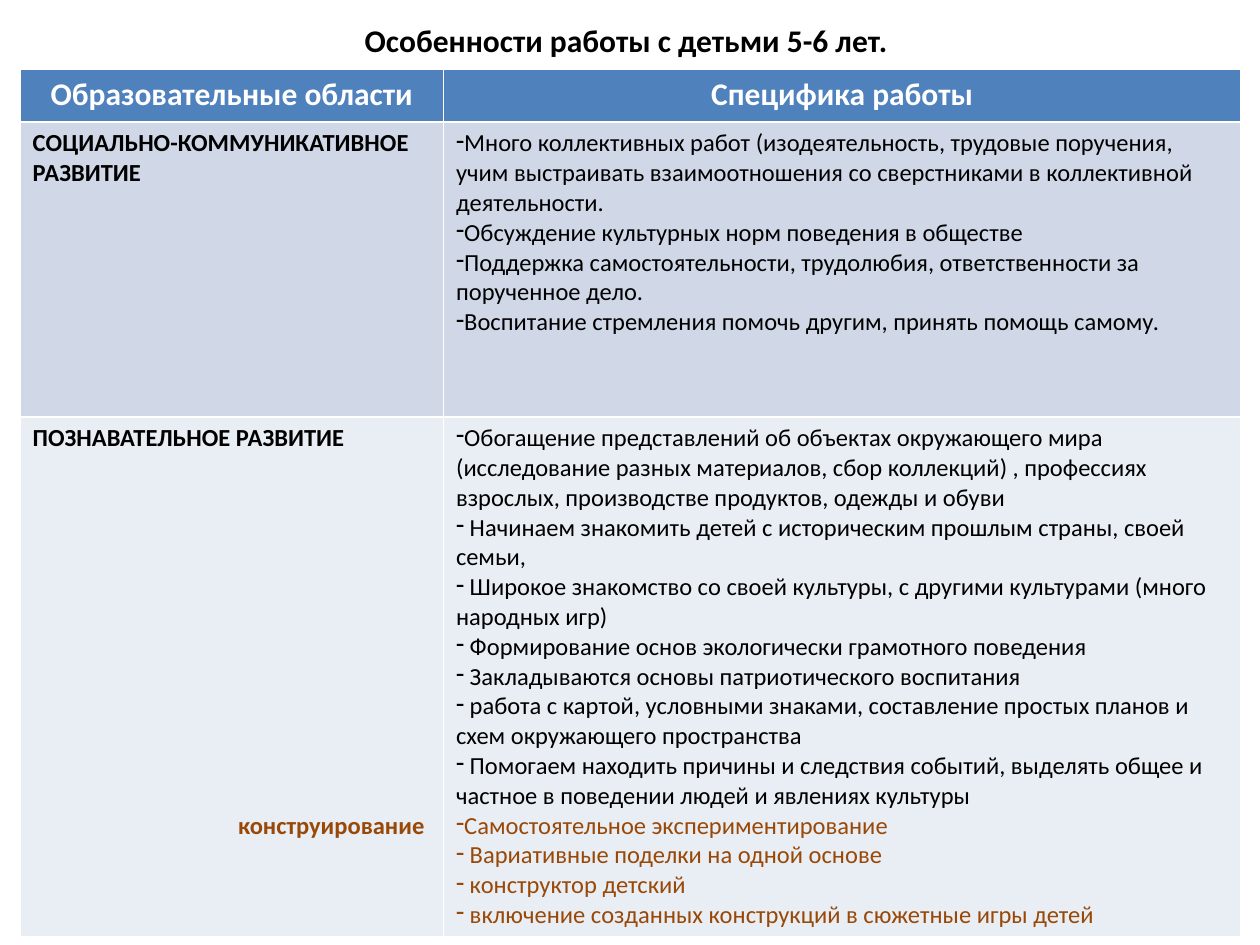
import pptx
import pptx.util
import pptx.dml.color
import pptx.enum.text
import lxml.etree

Inches = pptx.util.Inches
Pt = pptx.util.Pt
ALIGN = pptx.enum.text.PP_ALIGN
DARK, WHITE, BROWN = "000000", "FFFFFF", "984807"
HEADS = ["Образовательные области", "Специфика работы"]
SOCIAL = [
    "Много коллективных работ (изодеятельность, трудовые поручения, учим выстраивать "
    "взаимоотношения со сверстниками в коллективной деятельности.",
    "Обсуждение культурных норм поведения в обществе",
    "Поддержка самостоятельности, трудолюбия, ответственности за порученное дело.",
    "Воспитание стремления помочь другим, принять помощь самому.",
]
STUDY = [
    "Обогащение представлений об объектах окружающего мира (исследование разных "
    "материалов, сбор коллекций) , профессиях взрослых, производстве продуктов, одежды и обуви",
    " Начинаем знакомить детей с историческим прошлым страны, своей семьи,",
    " Широкое знакомство со своей культуры, с другими культурами (много народных игр)",
    " Формирование основ экологически грамотного поведения",
    " Закладываются основы патриотического воспитания",
    " работа с картой, условными знаками, составление простых планов и схем "
    "окружающего пространства",
    " Помогаем находить причины и следствия событий, выделять общее и частное "
    "в поведении людей и явлениях культуры",
]
BUILD = [
    "Самостоятельное экспериментирование",
    " Вариативные поделки на одной основе",
    " конструктор детский",
    " включение созданных конструкций в сюжетные игры детей",
]


def paint(target, hue):
    """Give a fill or font colour object the hex colour."""
    target.rgb = pptx.dml.color.RGBColor.from_string(hue)


def write(para, text, size, hue, bold=False, align=ALIGN.LEFT):
    """Add one formatted run to a paragraph."""
    para.alignment = align
    run = para.add_run()
    run.text = text
    run.font.name = "Calibri"
    run.font.size = Pt(size)
    run.font.bold = bold
    paint(run.font.color, hue)


def dash(para):
    """Turn a paragraph into a dash item without indent."""
    props = para._p.get_or_add_pPr()
    props.set("marL", "0")
    props.set("indent", "0")
    mark = lxml.etree.SubElement(props, pptx.oxml.ns.qn("a:buChar"))
    mark.set("char", "-")


def fill_list(frame, items):
    """Write (text, colour) pairs as dash items."""
    for i, (text, hue) in enumerate(items):
        para = frame.add_paragraph() if i else frame.paragraphs[0]
        write(para, text, 14, hue)
        dash(para)


def add_title(slide, left, top, width, height):
    """Place the slide title in its box."""
    title = slide.shapes.title
    title.left, title.top = Inches(left), Inches(top)
    title.width, title.height = Inches(width), Inches(height)
    frame = title.text_frame
    frame.vertical_anchor = pptx.enum.text.MSO_ANCHOR.MIDDLE
    write(frame.paragraphs[0], "Особенности работы с детьми 5-6 лет.",
          18, DARK, True, ALIGN.CENTER)


def add_grid(slide, left, top, width, height):
    """Place the table of learning areas in its box."""
    grid = slide.shapes.add_table(3, 2, Inches(left), Inches(top),
                                  Inches(width), Inches(height)).table
    first, head, social = 3.36, 0.42, 2.34
    for col, size in zip(grid.columns, [first, width - first]):
        col.width = Inches(size)
    for row, size in zip(grid.rows, [head, social, height - head - social]):
        row.height = Inches(size)
    for row, hue in zip(grid.rows, ["4F81BD", "D0D8E8", "E9EDF4"]):
        for cell in row.cells:
            cell.fill.solid()
            paint(cell.fill.fore_color, hue)

    for i, text in enumerate(HEADS):
        write(grid.cell(0, i).text_frame.paragraphs[0], text, 18, WHITE, True, ALIGN.CENTER)
    for i, text in enumerate(["СОЦИАЛЬНО-КОММУНИКАТИВНОЕ РАЗВИТИЕ", "ПОЗНАВАТЕЛЬНОЕ РАЗВИТИЕ"], 1):
        write(grid.cell(i, 0).text_frame.paragraphs[0], text, 14, DARK, True)

    study = grid.cell(2, 0)
    study.margin_right = Inches(0.15)
    para = study.text_frame.add_paragraph()
    para.space_before = Pt(12 * 17.06)
    write(para, "конструирование", 14, BROWN, True, ALIGN.RIGHT)

    fill_list(grid.cell(1, 1).text_frame, [(text, DARK) for text in SOCIAL])
    fill_list(grid.cell(2, 1).text_frame,
              [(text, DARK) for text in STUDY] + [(text, BROWN) for text in BUILD])


def main():
    """Build and save the slide."""
    deck = pptx.Presentation()
    deck.slide_width, deck.slide_height = Inches(10), Inches(7.5)
    slide = deck.slides.add_slide(deck.slide_layouts[5])
    add_title(slide, 0.47, 0, 9, 0.64)
    add_grid(slide, 0.16, 0.55, 9.69, 6.87)
    deck.save("out.pptx")


if __name__ == "__main__":
    main()
